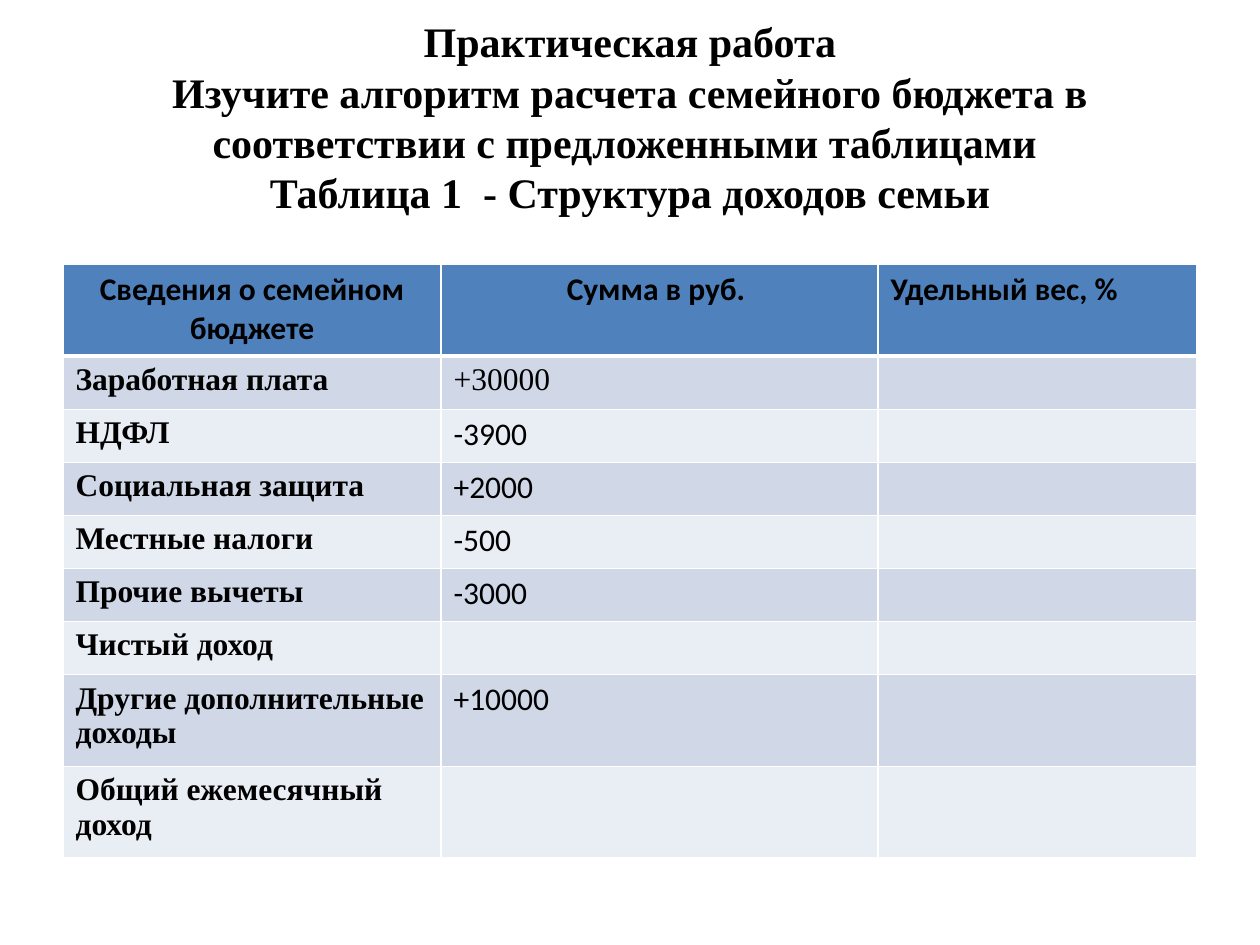
from dataclasses import dataclass

import pptx
import pptx.dml.color
import pptx.enum.text
import pptx.oxml.ns
import pptx.util
from lxml import etree
from pptx.util import Cm

ALIGN = pptx.enum.text.PP_ALIGN
SERIF, SANS = "Times New Roman", "Calibri"
COLORS = {
    "text": "000000",
    "header": "4F81BD",
    "odd": "D0D8E8",
    "even": "E9EDF4",
    "border": "FFFFFF",
}
TITLE = (
    "Практическая работа\v"
    "Изучите алгоритм расчета семейного бюджета в соответствии "
    "с предложенными таблицами \v"
    "Таблица 1  - Структура доходов семьи"
)
COLUMN_WIDTHS = (7.62, 8.81, 6.43)
LOW_ROW, TALL_ROW = 1.07, 1.85


@dataclass
class Income:
    label: str
    amount: str = ""
    amount_font: str = SANS
    height: float = LOW_ROW


HEADERS = (
    ("Сведения о семейном бюджете", ALIGN.CENTER),
    ("Сумма в руб. ", ALIGN.CENTER),
    ("Удельный вес, %", ALIGN.LEFT),
)
INCOMES = (
    Income("Заработная плата", "+30000", SERIF),
    Income("НДФЛ", "-3900"),
    Income("Социальная защита", "+2000"),
    Income("Местные налоги", "-500"),
    Income("Прочие вычеты", "-3000"),
    Income("Чистый доход"),
    Income("Другие дополнительные доходы", "+10000", height=TALL_ROW),
    Income("Общий ежемесячный доход", height=TALL_ROW),
)


def rgb(name: str) -> pptx.dml.color.RGBColor:
    return pptx.dml.color.RGBColor.from_string(COLORS[name])


def write_text(frame, text: str, *, font: str = SANS, size: float = 18,
               bold: bool = False, align=ALIGN.LEFT) -> None:
    frame.text = text
    para = frame.paragraphs[0]
    para.alignment = align
    for style in [para.font] + [span.font for span in para.runs]:
        style.name, style.size, style.bold = font, pptx.util.Pt(size), bold
        style.color.rgb = rgb("text")


def style_cell(cell, fill: str, *, top: float = 1, bottom: float = 1) -> None:
    """Set the borders (widths in points), then the fill that follows them."""
    properties = cell._tc.get_or_add_tcPr()
    qn = pptx.oxml.ns.qn
    for tag, width in (("lnL", 1), ("lnR", 1), ("lnT", top), ("lnB", bottom)):
        line = etree.SubElement(properties, qn(f"a:{tag}"),
                                w=str(pptx.util.Pt(width)))
        solid = etree.SubElement(line, qn("a:solidFill"))
        etree.SubElement(solid, qn("a:srgbClr"), val=COLORS["border"])
    cell.fill.solid()
    cell.fill.fore_color.rgb = rgb(fill)


def add_title(page) -> None:
    title = page.shapes.title
    title.left, title.top = Cm(1.27), Cm(0.76)
    title.width, title.height = Cm(22.86), Cm(3.18)
    frame = title.text_frame
    frame.word_wrap = True
    frame.auto_size = pptx.enum.text.MSO_AUTO_SIZE.NONE
    frame.vertical_anchor = pptx.enum.text.MSO_ANCHOR.MIDDLE
    write_text(frame, TITLE, font=SERIF, size=24, bold=True, align=ALIGN.CENTER)


def add_income_table(page) -> None:
    heights = [TALL_ROW] + [income.height for income in INCOMES]
    table = page.shapes.add_table(
        len(heights), len(COLUMN_WIDTHS), Cm(1.27), Cm(5.33),
        Cm(sum(COLUMN_WIDTHS)), Cm(sum(heights))).table
    for column, width in zip(table.columns, COLUMN_WIDTHS):
        column.width = Cm(width)
    for row, height in zip(table.rows, heights):
        row.height = Cm(height)

    # Header row
    for cell, (text, align) in zip(table.rows[0].cells, HEADERS):
        style_cell(cell, "header", bottom=3)
        write_text(cell.text_frame, text, bold=True, align=align)

    # Income rows
    for number, income in enumerate(INCOMES, start=1):
        cells = list(table.rows[number].cells)
        for cell in cells:
            style_cell(cell, "odd" if number % 2 else "even",
                       top=3 if number == 1 else 1)
        label, amount, share = cells
        write_text(label.text_frame, income.label, font=SERIF, bold=True)
        write_text(amount.text_frame, income.amount, font=income.amount_font)
        write_text(share.text_frame, "")


def main() -> None:
    deck = pptx.Presentation()
    deck.slide_width, deck.slide_height = Cm(25.4), Cm(19.05)
    page = deck.slides.add_slide(deck.slide_layouts.get_by_name("Title Only"))
    add_title(page)
    add_income_table(page)
    deck.save("out.pptx")


if __name__ == "__main__":
    main()
